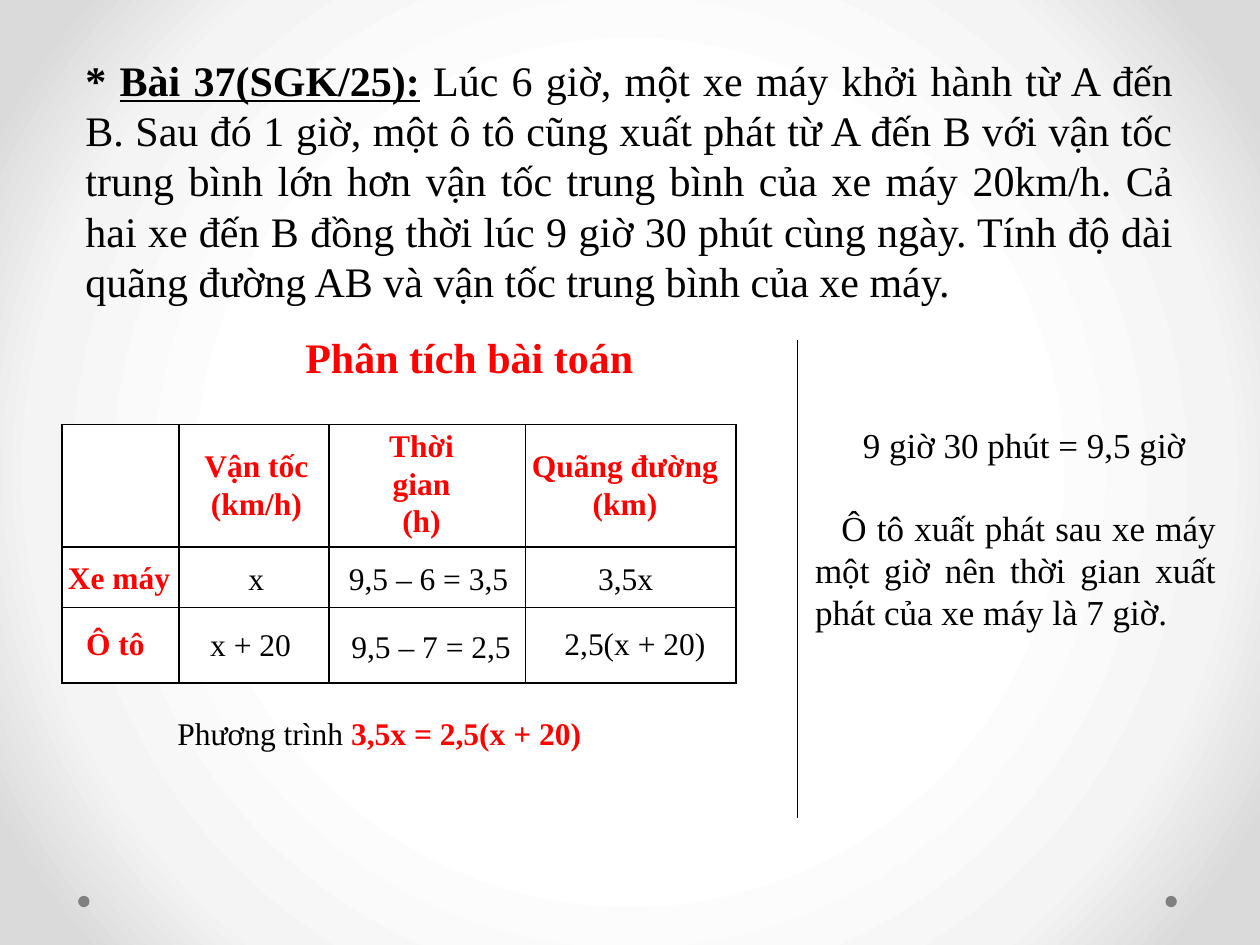
from lxml.etree import SubElement
from pptx import Presentation
from pptx.dml.color import RGBColor
from pptx.enum.shapes import MSO_CONNECTOR, MSO_SHAPE
from pptx.enum.text import MSO_AUTO_SIZE, PP_ALIGN
from pptx.oxml import parse_xml
from pptx.oxml.ns import nsdecls, qn
from pptx.util import Inches, Pt

INK = {"black": "000000", "red": "FF0000", "white": "FFFFFF",
       "dot": "808080", "mist": "F4F4F4", "edge": "DADADA"}
LEFT, MID, JUST = PP_ALIGN.LEFT, PP_ALIGN.CENTER, PP_ALIGN.JUSTIFY
PLAIN = {"name": "Times New Roman", "size": Pt(18), "bold": False}
RED = {"bold": True, "ink": "red"}


def paint(font, form):
    for key, val in {**PLAIN, "ink": "black", **form}.items():
        if key == "ink":
            font.color.rgb = RGBColor.from_string(INK[val])
        else:
            setattr(font, key, val)


def add_text(slide, box, paras, align=MID, indent=0):
    """Each paragraph is a list of (text, format) runs."""
    frame = slide.shapes.add_textbox(*map(Inches, box)).text_frame
    frame.word_wrap = True
    frame.auto_size = MSO_AUTO_SIZE.SHAPE_TO_FIT_TEXT
    for i, runs in enumerate(paras):
        para = frame.add_paragraph() if i else frame.paragraphs[0]
        para.alignment = align
        if indent:
            para._p.get_or_add_pPr().set("indent", str(Inches(indent)))
        for text, form in runs:
            run = para.add_run()
            run.text = text
            paint(run.font, form)


def add_back(slide):
    # Radial gradient, light in the centre
    stops = "".join(
        f'<a:gs pos="{pos}000"><a:srgbClr val="{INK[ink]}"/></a:gs>'
        for pos, ink in ((50, "white"), (76, "mist"), (92, "edge")))
    slide._element.cSld.insert(0, parse_xml(
        f'<p:bg {nsdecls("p", "a")}><p:bgPr><a:gradFill rotWithShape="1">'
        f'<a:gsLst>{stops}</a:gsLst><a:path path="circle">'
        '<a:fillToRect l="50000" t="50000" r="50000" b="50000"/></a:path>'
        '</a:gradFill><a:effectLst/></p:bgPr></p:bg>'))
    # Corner dots
    for x in (9.25, 0.62):
        dot = slide.shapes.add_shape(
            MSO_SHAPE.OVAL, Inches(x), Inches(7.11), Inches(0.09), Inches(0.09))
        dot.shadow.inherit = False
        dot.fill.solid()
        dot.fill.fore_color.rgb = RGBColor.from_string(INK["dot"])
        dot.line.fill.background()


def add_task(slide, x, y):
    big = {"size": Pt(24)}
    head = {**big, "bold": True}
    add_text(slide, (x, y, 8.83, 2.12), [[
        ("* ", head),
        ("Bài 37(SGK/25):", {**head, "underline": True}),
        (" Lúc 6 giờ, một xe máy khởi hành từ A đến B. Sau đó 1 giờ, một ô tô "
         "cũng xuất phát từ A đến B với vận tốc trung bình lớn hơn vận tốc "
         "trung bình của xe máy 20km/h. Cả hai xe đến B đồng thời lúc 9 giờ "
         "30 phút cùng ngày. Tính độ dài quãng đường AB và vận tốc trung bình "
         "của xe máy.", big)]], JUST)


def style_cell(cell):
    cell.fill.solid()
    cell.fill.fore_color.rgb = RGBColor.from_string(INK["white"])
    props = cell._tc.get_or_add_tcPr()
    for i, side in enumerate(("lnL", "lnR", "lnT", "lnB")):
        line = SubElement(props, qn(f"a:{side}"), w=str(Pt(1)))
        fill = SubElement(line, qn("a:solidFill"))
        SubElement(fill, qn("a:srgbClr"), val=INK["black"])
        props.insert(i, line)


def add_grid(slide, x, y):
    cols, rows = (0.93, 1.19, 1.56, 1.67), (0.97, 0.48, 0.6)
    table = slide.shapes.add_table(
        len(rows), len(cols), Inches(x), Inches(y),
        Inches(sum(cols)), Inches(sum(rows))).table
    for col, wide in zip(table.columns, cols):
        col.width = Inches(wide)
    for row, high in zip(table.rows, rows):
        row.height = Inches(high)
    for cell in table.iter_cells():
        style_cell(cell)

    # Labels laid over the grid: offset, size, lines, format, alignment
    labels = (
        (0.99, 0.12, 1.11, 0.71, ("Vận tốc", "(km/h)"), RED, MID),
        (2.26, -0.04, 1.19, 1.01, ("Thời gian", "(h)"), RED, MID),
        (3.6, 0.12, 1.74, 0.71, ("Quãng đường", "(km)"), RED, MID),
        (-0.14, 1.01, 1.19, 0.4, ("Xe máy",), RED, MID),
        (1.28, 1.02, 0.53, 0.4, ("x",), {}, MID),
        (2.18, 1.02, 1.62, 0.4, ("9,5 – 6 = 3,5",), {}, LEFT),
        (4.08, 1.02, 0.79, 0.37, ("3,5x",), {}, MID),
        (-0.17, 1.53, 1.19, 0.4, ("Ô tô",), RED, MID),
        (1.08, 1.54, 0.88, 0.4, ("x + 20",), {}, LEFT),
        (2.2, 1.56, 1.62, 0.4, ("9,5 – 7 = 2,5",), {}, LEFT),
        (3.82, 1.53, 1.46, 0.37, ("2,5(x + 20)",), {}, MID),
    )
    for dx, dy, wide, high, lines, form, align in labels:
        add_text(slide, (x + dx, y + dy, wide, high),
                 [[(line, form)] for line in lines], align)


def add_study(slide, x, y):
    add_text(slide, (x + 1.52, y, 3.43, 0.5),
             [[("Phân tích bài toán", {**RED, "size": Pt(24)})]])
    add_grid(slide, x, y + 0.79)
    add_text(slide, (x + 0.82, y + 3.04, 3.46, 0.4),
             [[("Phương trình ", {}), ("3,5x = 2,5(x + 20)", RED)]], LEFT)


def add_notes(slide, x, y):
    # Dividing rule
    rule = slide.shapes.add_connector(
        MSO_CONNECTOR.STRAIGHT, Inches(x), Inches(y), Inches(x), Inches(y + 3.79))
    rule.line.color.rgb = RGBColor.from_string(INK["black"])
    rule.line.width = Pt(0.75)
    SubElement(rule._element.spPr, qn("a:effectLst"))
    # Remarks on the times
    form = {"size": Pt(20)}
    add_text(slide, (x + 0.42, y + 0.61, 3, 0.44),
             [[("9 giờ 30 phút = 9,5 giờ", form)]], LEFT)
    add_text(slide, (x + 0.04, y + 1.27, 3.38, 1.11),
             [[("Ô tô xuất phát sau xe máy một giờ nên thời gian xuất phát "
                "của xe máy là 7 giờ.", form)]], JUST, 0.21)


def main():
    deck = Presentation()
    deck.slide_width, deck.slide_height = Inches(10), Inches(7.5)
    slide = deck.slides.add_slide(deck.slide_layouts[6])
    add_back(slide)
    add_task(slide, 0.58, 0.38)
    add_study(slide, 0.49, 2.58)
    add_notes(slide, 6.33, 2.7)
    deck.save("out.pptx")


if __name__ == "__main__":
    main()
